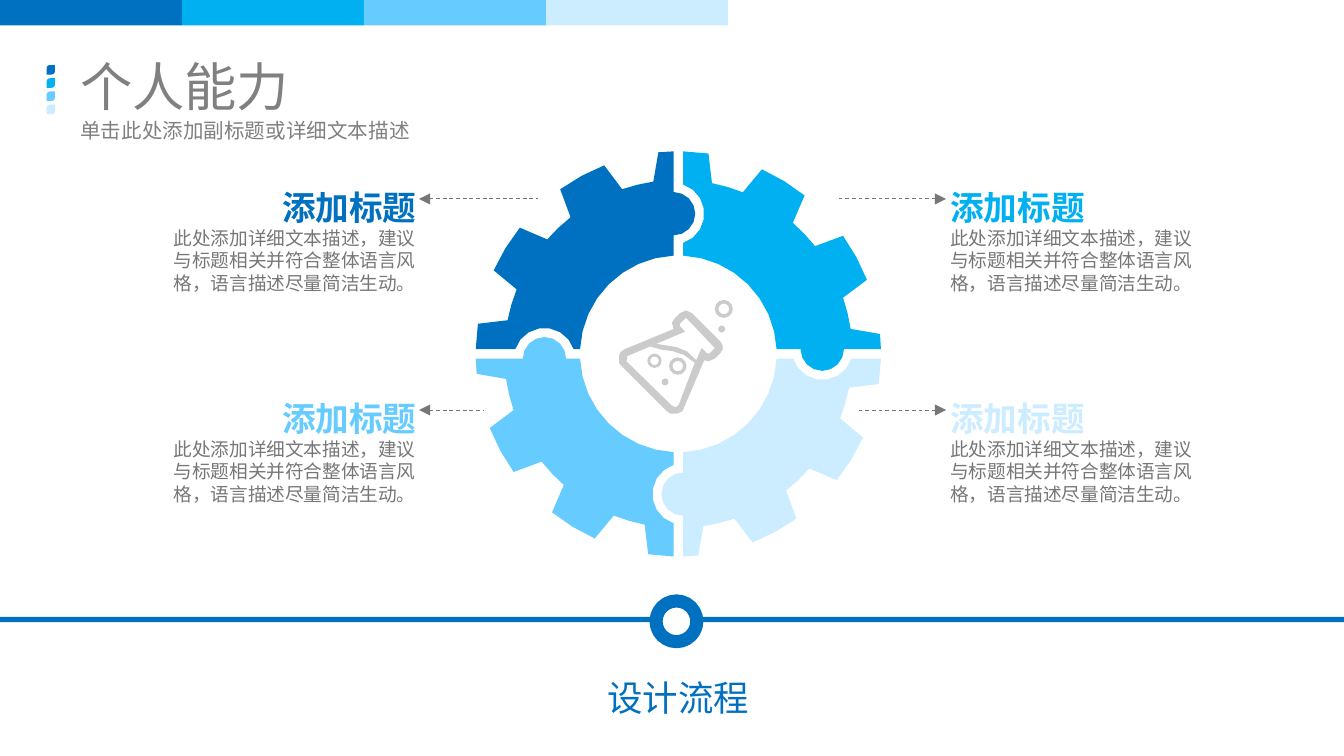
import math

import lxml.etree
import pptx
import pptx.dml.color
import pptx.enum.dml
import pptx.enum.shapes
import pptx.enum.text
import pptx.oxml
import pptx.oxml.ns
import pptx.util

Cm, Pt = pptx.util.Cm, pptx.util.Pt
SHAPE = pptx.enum.shapes.MSO_SHAPE
ALIGN = pptx.enum.text.PP_ALIGN
ANCHOR = pptx.enum.text.MSO_ANCHOR
qn = pptx.oxml.ns.qn

COLORS = {
    "blue": "0070C0", "cyan": "00B0F0", "sky": "66CCFF", "pale": "CCECFF",
    "title": "808080", "body": "777777", "icon": "CBCBCB", "white": "FFFFFF",
}
SHADES = ["blue", "cyan", "sky", "pale"]

# Gear measures in centimetres and degrees
GEAR_CENTER = (12.82, 6.69)
TIP, ROOT, HOLE = 3.83, 3.29, 1.86
PITCH, SKEW, HALF_TIP, HALF_ROOT = 30, -1.45, 7.1, 9.7
HALF_GAP, KNOB, NOTCH = 0.09, 0.41, 0.58
JOINT_DISTANCES = [2.65, 2.72, 2.65, 2.53]  # top, right, bottom, left
FLATNESS = 0.01  # largest distance between an arc and its chords

FLASK = [
    [(13.08, 5.92), (12.97, 5.87), (12.85, 5.92), (12.75, 6.02), (12.7, 6.1),
     (12.73, 6.22), (11.81, 6.6), (11.73, 6.65), (11.7, 6.73), (11.7, 6.86),
     (11.76, 6.93), (12.6, 7.77), (12.67, 7.82), (12.8, 7.82), (12.9, 7.77),
     (12.93, 7.7), (13.31, 6.81), (13.39, 6.83), (13.51, 6.78), (13.61, 6.68),
     (13.66, 6.6), (13.66, 6.53), (13.61, 6.45)],
    [(12.83, 7.65), (12.78, 7.7), (12.7, 7.67), (11.84, 6.83), (11.86, 6.73),
     (12.29, 6.55), (12.5, 6.61), (12.72, 6.64), (12.93, 6.71), (13.13, 6.86)],
    [(13.51, 6.58), (13.41, 6.68), (13.36, 6.68), (13.26, 6.58), (13.16, 6.81),
     (12.98, 6.64), (12.78, 6.56), (12.4, 6.5), (12.95, 6.27), (12.85, 6.17),
     (12.85, 6.12), (12.95, 6.02), (12.98, 6.02)],
]
BUBBLES = [  # preset, centre x, centre y, diameter
    (SHAPE.DONUT, 12.81, 6.92, 0.33), (SHAPE.DONUT, 13.68, 5.84, 0.34),
    (SHAPE.DONUT, 12.37, 6.82, 0.27), (SHAPE.OVAL, 12.57, 7.22, 0.13),
    (SHAPE.OVAL, 13.64, 6.22, 0.13),
]

HEADING = "添加标题"
DETAIL = "此处添加详细文本描述，建议与标题相关并符合整体语言风格，语言描述尽量简洁生动。"
ROW_PITCH = 3.99
CAPTIONS = [  # colour, row, alignment, heading left, detail left, arrow tip, arrow tail
    ("blue", 0, ALIGN.RIGHT, 3.4, 3.0, 7.92, 10.16),
    ("sky", 1, ALIGN.RIGHT, 3.4, 3.0, 7.92, 9.14),
    ("cyan", 0, ALIGN.LEFT, 17.86, 17.86, 17.88, 15.82),
    ("pale", 1, ALIGN.LEFT, 17.86, 17.86, 17.88, 16.18),
]


def rgb(color):
    return pptx.dml.color.RGBColor.from_string(COLORS[color])


def apply(target, values):
    for name, value in values.items():
        setattr(target, name, value)


def arc(radius, start, end, center=(0, 0)):
    """Points on a circle; angles run anticlockwise from straight up."""
    widest = 2 * math.degrees(math.acos(1 - FLATNESS / radius))
    steps = math.ceil(abs(end - start) / widest)
    angles = [math.radians(start + (end - start) * i / steps) for i in range(steps + 1)]
    return [(center[0] - radius * math.sin(a), center[1] - radius * math.cos(a))
            for a in angles]


def edge_angle(radius):
    return math.degrees(math.asin(HALF_GAP / radius))


def gear_quarter(turns):
    """Outline of the top-left quarter, turned clockwise by quarter turns."""
    outline = arc(TIP, edge_angle(TIP), SKEW + HALF_TIP)
    for tooth in range(1, 4):
        middle = SKEW + tooth * PITCH
        outline += arc(ROOT, middle - PITCH + HALF_ROOT, middle - HALF_ROOT)
        outline += arc(TIP, middle - HALF_TIP, min(middle + HALF_TIP, 90 - edge_angle(TIP)))
    opening = math.degrees(math.acos(2 * HALF_GAP / NOTCH))
    outline += arc(NOTCH, opening, -opening, (-JOINT_DISTANCES[turns - 1], HALF_GAP))
    outline += arc(HOLE, 90 - edge_angle(HOLE), edge_angle(HOLE))
    outline += arc(KNOB, -180, 0, (-HALF_GAP, -JOINT_DISTANCES[turns]))
    for _ in range(turns):
        outline = [(-y, x) for x, y in outline]
    return [(GEAR_CENTER[0] + x, GEAR_CENTER[1] + y) for x, y in outline]


class SlideWriter:
    font_name = "Noto Sans CJK SC"
    line_height = 1.21
    top_shift = 0.12

    def __init__(self, slide):
        self.slide = slide

    def paint(self, shape, fill, line=None, width=0):
        shape.shadow.inherit = False
        shape.fill.solid()
        shape.fill.fore_color.rgb = rgb(fill)
        if line:
            shape.line.color.rgb = rgb(line)
            shape.line.width = Pt(width)
        else:
            shape.line.fill.background()

    def preset(self, kind, box, fill, line=None, width=0, adjust=None):
        shape = self.slide.shapes.add_shape(kind, *map(Cm, box))
        if adjust is not None:
            shape.adjustments[0] = adjust
        self.paint(shape, fill, line, width)

    def outline(self, contours, fill):
        """Closed shape; contours after the first are holes."""
        paths = [[(Cm(x), Cm(y)) for x, y in contour] for contour in contours]
        builder = self.slide.shapes.build_freeform(*paths[0][0])
        builder.add_line_segments(paths[0][1:])
        for hole in paths[1:]:
            builder.move_to(*hole[0])
            builder.add_line_segments(hole[1:])
        self.paint(builder.convert_to_shape(), fill)

    def text(self, words, box, size, color, inset, align=ALIGN.LEFT,
             anchor=ANCHOR.TOP, bold=False):
        frame = self.slide.shapes.add_textbox(*map(Cm, box)).text_frame
        side, edge = map(Cm, inset)
        apply(frame, {
            "word_wrap": True, "vertical_anchor": anchor,
            "margin_left": side, "margin_right": side,
            "margin_top": edge + Pt(size * self.top_shift), "margin_bottom": edge,
        })
        paragraph = frame.paragraphs[0]
        apply(paragraph, {"alignment": align, "line_spacing": Pt(size * self.line_height)})
        run = paragraph.add_run()
        run.text = words
        apply(run.font, {"name": self.font_name, "size": Pt(size), "bold": bold})
        run.font.color.rgb = rgb(color)
        east_asian = lxml.etree.SubElement(run.font._element, qn("a:ea"))
        east_asian.set("typeface", self.font_name)

    def arrow(self, tip, tail, y):
        connector = self.slide.shapes.add_connector(
            pptx.enum.shapes.MSO_CONNECTOR.STRAIGHT, Cm(tip), Cm(y), Cm(tail), Cm(y))
        connector.line.color.rgb = rgb("body")
        apply(connector.line, {"width": Pt(0.5),
                               "dash_style": pptx.enum.dml.MSO_LINE.DASH})
        head = lxml.etree.SubElement(connector.line._get_or_add_ln(), qn("a:headEnd"))
        head.set("type", "triangle")
        lxml.etree.SubElement(connector._element.spPr, qn("a:effectLst"))


def main():
    deck = pptx.Presentation()
    apply(deck, {"slide_width": Cm(25.4), "slide_height": Cm(14.29)})
    writer = SlideWriter(deck.slides.add_slide(deck.slide_layouts[6]))

    writer.text("个人能力", (1.27, 1.04, 22.86, 1.02), 28, "title", (0.25, 0.13),
                anchor=ANCHOR.MIDDLE)
    writer.text("单击此处添加副标题或详细文本描述", (1.27, 2.06, 22.86, 0.84), 11, "title",
                (0.25, 0.13))
    writer.text("设计流程", (9.93, 12.62, 5.77, 0.99), 19, "blue", (0.08, 0.08),
                ALIGN.CENTER)

    for turns, shade in enumerate(["blue", "cyan", "pale", "sky"]):
        writer.outline([gear_quarter(turns)], shade)

    for shade, row, align, heading_left, detail_left, tip, tail in CAPTIONS:
        drop = row * ROW_PITCH
        writer.text(DETAIL, (detail_left, 4.14 + drop, 4.95, 1.5), 10, "body",
                    (0.1, 0.1), align)
        writer.text(HEADING, (heading_left, 3.35 + drop, 4.57, 0.99), 18, shade,
                    (0.1, 0.1), align, bold=True)
        writer.arrow(tip, tail, 3.76 + drop)

    writer.outline(FLASK, "icon")
    for kind, x, y, diameter in BUBBLES:
        writer.preset(kind, (x - diameter / 2, y - diameter / 2, diameter, diameter),
                      "icon", adjust=0.2 if kind == SHAPE.DONUT else None)

    for left, width in [(0, 12.37), (12.83, 12.57)]:
        writer.preset(SHAPE.RECTANGLE, (left, 11.66, width, 0.1), "blue")
    writer.preset(SHAPE.OVAL, (12.4, 11.36, 0.77, 0.77), "white", "blue", 7)

    for index, shade in enumerate(SHADES):
        writer.preset(SHAPE.RECTANGLE, (index * 3.44, 0, 3.44, 0.48), shade)
        writer.preset(SHAPE.ROUND_2_DIAG_RECTANGLE, (0.88, 1.23 + index * 0.25, 0.16, 0.18),
                      shade, adjust=0.4)

    deck.save("out.pptx")


if __name__ == "__main__":
    main()
